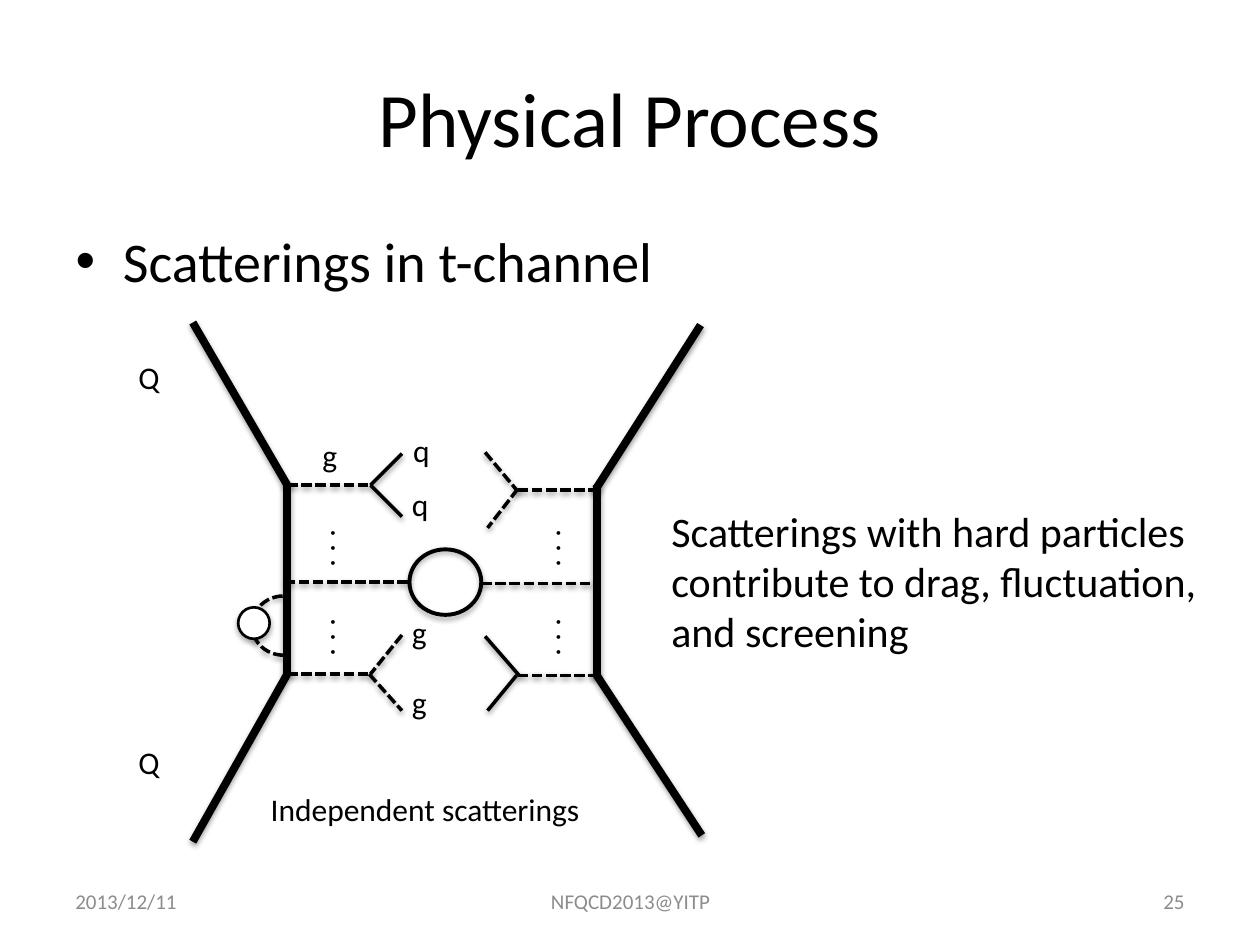
from pptx import Presentation
from pptx.dml.color import RGBColor
from pptx.enum.dml import MSO_LINE
from pptx.enum.shapes import MSO_CONNECTOR, MSO_SHAPE
from pptx.enum.text import MSO_ANCHOR, MSO_AUTO_SIZE, PP_ALIGN
from pptx.oxml import parse_xml
from pptx.oxml.ns import nsdecls
from pptx.util import Emu, Pt

PX = 9144  # 100 px to the inch
DASH, STRAIGHT = MSO_LINE.SQUARE_DOT, MSO_CONNECTOR.STRAIGHT
OVAL, ARC = MSO_SHAPE.OVAL, MSO_SHAPE.ARC
LEFT, CENTER, RIGHT = PP_ALIGN.LEFT, PP_ALIGN.CENTER, PP_ALIGN.RIGHT
MIDDLE, GROW = MSO_ANCHOR.MIDDLE, MSO_AUTO_SIZE.SHAPE_TO_FIT_TEXT
FONT, BLACK, WHITE, GRAY = "Calibri", "000000", "FFFFFF", "8C8C8C"

TITLE = ("Physical Process", (50, 30, 900, 125), 44)
BULLET = ("Scatterings in t-channel", (50, 175, 900, 495), 32)
FOOTERS = [
    ("2013/12/11", (50, 695, 233, 40), LEFT),
    ("NFQCD2013@YITP", (342, 695, 317, 40), CENTER),
    ("25", (717, 695, 233, 40), RIGHT),
]
REMARK = ("Scatterings with hard particles contribute to drag, fluctuation, "
          "and screening", (523, 396, 454, 131))
LABELS = [
    ("Q", (100, 279, 37, 40)), ("Q", (100, 585, 37, 40)),
    ("g", (246, 341, 32, 40)),
    ("q", (318, 337, 33, 40)), ("q", (317, 380, 33, 40)),
    ("g", (317, 482, 32, 40)), ("g", (317, 537, 32, 40)),
    ("Independent scatterings", (205, 622, 267, 40)),
]
DOT_COLUMNS, DOT_ROWS, DOT_SIZE = (243, 422), (410, 481), (50, 41)

HEAVY_QUARKS = [
    (153, 256, 228, 385), (228, 383, 228, 535), (228, 535, 153, 668),
    (556, 258, 473, 388), (474, 385, 474, 537), (473, 535, 557, 663),
]
GLUONS = [
    (228, 385, 294, 385), (226, 462, 326, 462), (228, 535, 294, 535),
    (293, 535, 319, 564), (319, 504, 294, 535),
    (411, 389, 477, 389), (382, 463, 473, 463), (411, 536, 478, 536),
    (411, 388, 387, 419), (385, 359, 411, 390),
]
LIGHT_QUARKS = [
    (294, 385, 319, 360), (294, 385, 319, 410),
    (387, 564, 410, 536), (412, 536, 385, 505),
]
LINE_GROUPS = [(HEAVY_QUARKS, 4.5, None), (GLUONS, 2, DASH), (LIGHT_QUARKS, 2, None)]


def rgb(color):
    return RGBColor.from_string(color)


def scaled(lengths):
    return [Emu(length * PX) for length in lengths]


def add_shadow(part, distance, opacity):
    part._element.spPr.append(parse_xml(
        f'<a:effectLst {nsdecls("a")}><a:outerShdw blurRad="40000" dist="{distance}" '
        f'dir="5400000" rotWithShape="0"><a:srgbClr val="{BLACK}">'
        f'<a:alpha val="{opacity}"/></a:srgbClr></a:outerShdw></a:effectLst>'))


def style_line(part, weight, dash=None):
    part.line.color.rgb = rgb(BLACK)
    part.line.width = Pt(weight)
    if dash:
        part.line.dash_style = dash


def write(holder, text, size, color=BLACK, align=LEFT, **frame_format):
    frame = holder.text_frame
    frame.text = text
    for name, value in frame_format.items():
        setattr(frame, name, value)
    paragraph = frame.paragraphs[0]
    paragraph.alignment = align
    font = paragraph.runs[0].font
    for name, value in {"name": FONT, "size": Pt(size)}.items():
        setattr(font, name, value)
    font.color.rgb = rgb(color)


def fill_placeholder(holder, text, box, size, **options):
    holder.left, holder.top, holder.width, holder.height = scaled(box)
    write(holder, text, size, **options)


def add_text(slide, text, box, size, **options):
    holder = slide.shapes.add_textbox(*scaled(box))
    write(holder, text, size, **options)
    return holder


def add_round(slide, kind, box, weight, fill=None, dash=None):
    part = slide.shapes.add_shape(kind, *scaled(box))
    if fill:
        part.fill.solid()
        part.fill.fore_color.rgb = rgb(fill)
    else:
        part.fill.background()
    style_line(part, weight, dash)
    add_shadow(part, 23000, 35000)
    return part


def draw_diagram(slide):
    for lines, weight, dash in LINE_GROUPS:
        for ends in lines:
            line = slide.shapes.add_connector(STRAIGHT, *scaled(ends))
            style_line(line, weight, dash)
            add_shadow(line, 20000, 38000)

    add_round(slide, OVAL, (325, 436, 57, 52), 2.25)
    self_energy = add_round(slide, ARC, (200, 473, 50, 47), 2, dash=DASH)
    self_energy.rotation = 180
    self_energy.adjustments[0] = 162
    self_energy.adjustments[1] = 57.09
    add_round(slide, OVAL, (189, 482, 25, 25), 1.5, WHITE)

    for text, box in LABELS:
        add_text(slide, text, box, 18, word_wrap=False, auto_size=GROW)
    for left in DOT_COLUMNS:
        for top in DOT_ROWS:
            dots = add_text(slide, ". . .", (left, top, *DOT_SIZE), 18,
                            word_wrap=False, auto_size=GROW)
            dots.text_frame._txBody.bodyPr.set("vert", "eaVert")


def main():
    deck = Presentation()
    deck.slide_width, deck.slide_height = scaled((1000, 750))
    slide = deck.slides.add_slide(deck.slide_layouts[1])
    fill_placeholder(slide.shapes.title, *TITLE, align=CENTER, vertical_anchor=MIDDLE)
    fill_placeholder(slide.placeholders[1], *BULLET)
    for text, box, align in FOOTERS:
        add_text(slide, text, box, 12, color=GRAY, align=align,
                 word_wrap=True, vertical_anchor=MIDDLE)
    add_text(slide, *REMARK, 24, word_wrap=True, auto_size=GROW)
    draw_diagram(slide)
    deck.save("out.pptx")


if __name__ == "__main__":
    main()
